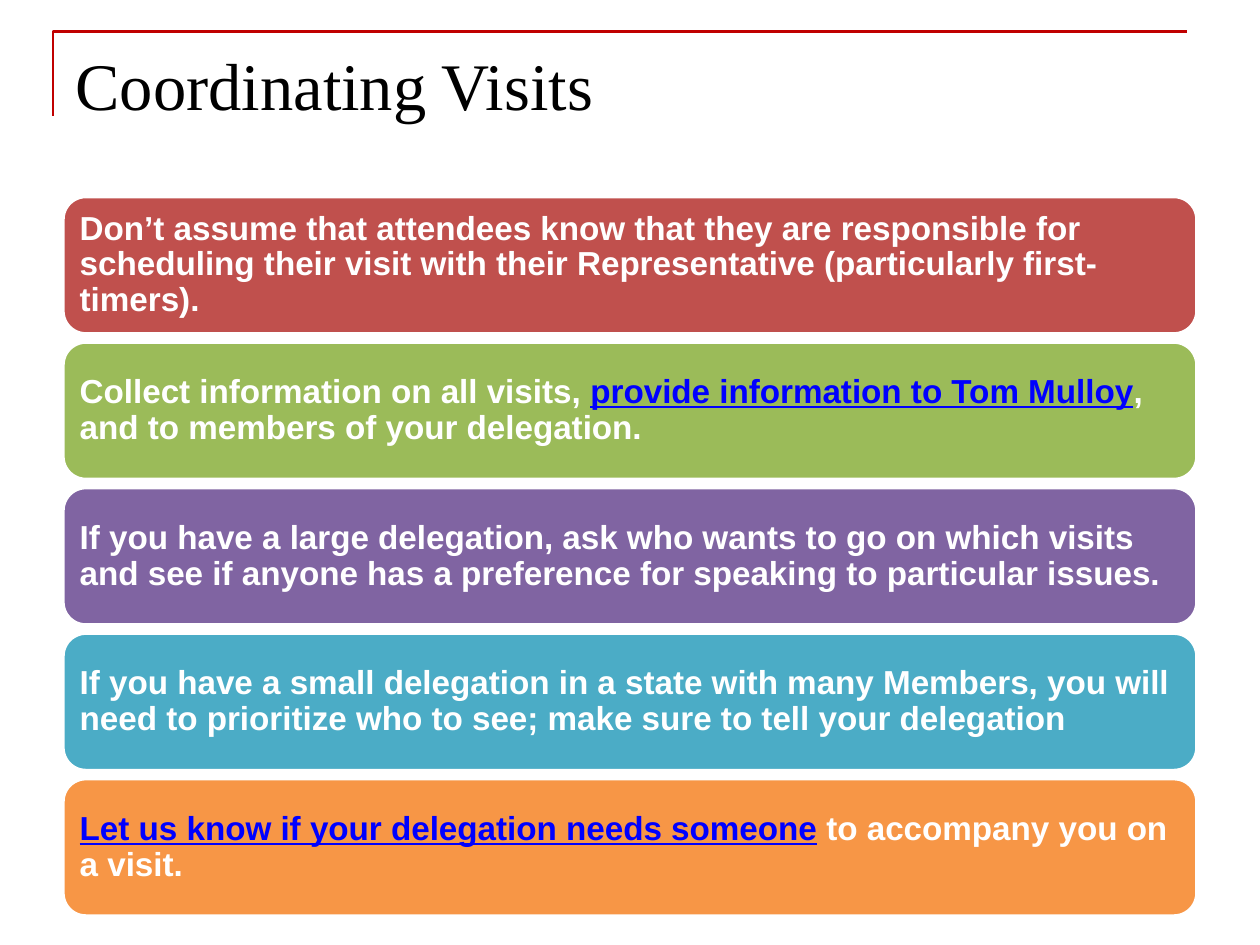
"""Build the Coordinating Visits slide with five coloured advice cards."""
from pptx import Presentation
from pptx.dml.color import RGBColor
from pptx.enum import shapes, text
from pptx.util import Inches, Pt


def color(value):
    return RGBColor.from_string(value)


def apply(target, values):
    for name, value in values.items():
        setattr(target, name, value)


presentation = Presentation()
apply(presentation, {"slide_width": Inches(10), "slide_height": Inches(7.5)})
slide = presentation.slides.add_slide(presentation.slide_layouts[5])

builder = slide.shapes.build_freeform(Inches(0.42), Inches(0.92))
builder.add_line_segments([(Inches(0.42), Inches(0.25)), (Inches(9.42), Inches(0.25))], close=False)
corner = builder.convert_to_shape()
corner.shadow.inherit = False
corner.fill.background()
corner.line.color.rgb = color("C00000")
corner.line.width = Pt(1.5)

title = slide.shapes.title
apply(title, {"left": Inches(0.5), "top": Inches(0.3), "width": Inches(9), "height": Inches(1.25)})
title.text_frame.text = "Coordinating Visits"
apply(title.text_frame, {"vertical_anchor": text.MSO_ANCHOR.TOP, "word_wrap": True})
heading = title.text_frame.paragraphs[0]
heading.alignment = text.PP_ALIGN.LEFT
apply(heading.font, {"name": "Times New Roman", "size": Pt(38)})
heading.font.color.rgb = color("000000")

cards = [
    ("C0504D", [("Don’t assume that attendees know that they are responsible for scheduling "
                 "their visit with their Representative (particularly first-timers).", False)]),
    ("9BBB59", [("Collect information on all visits, ", False),
                ("provide information to Tom Mulloy", True),
                (", and to members of your delegation.", False)]),
    ("8064A2", [("If you have a large delegation, ask who wants to go on which visits and see "
                 "if anyone has a preference for speaking to particular issues.", False)]),
    ("4BACC6", [("If you have a small delegation in a state with many Members, you will need to "
                 "prioritize who to see; make sure to tell your delegation", False)]),
    ("F79646", [("Let us know if your delegation needs someone", True),
                (" to accompany you on a visit.", False)]),
]
frame_format = {"word_wrap": True, "vertical_anchor": text.MSO_ANCHOR.MIDDLE}
for side in ("left", "top", "right", "bottom"):
    frame_format[f"margin_{side}"] = Inches(0.08)

for index, (fill, runs) in enumerate(cards):
    card = slide.shapes.add_shape(
        shapes.MSO_SHAPE.ROUNDED_RECTANGLE,
        Inches(0.5), Inches(1.56 + 1.155 * index), Inches(9), Inches(1.09))
    card.shadow.inherit = False
    card.fill.solid()
    card.fill.fore_color.rgb = color(fill)
    card.line.color.rgb = color("FFFFFF")
    card.line.width = Pt(2)
    apply(card.text_frame, frame_format)
    paragraph = card.text_frame.paragraphs[0]
    apply(paragraph, {"alignment": text.PP_ALIGN.LEFT, "line_spacing": 0.9})
    for wording, linked in runs:
        run = paragraph.add_run()
        run.text = wording
        apply(run.font, {"name": "Arial", "size": Pt(19), "bold": True, "underline": linked})
        run.font.color.rgb = color("0000FF" if linked else "FFFFFF")

presentation.save("out.pptx")
